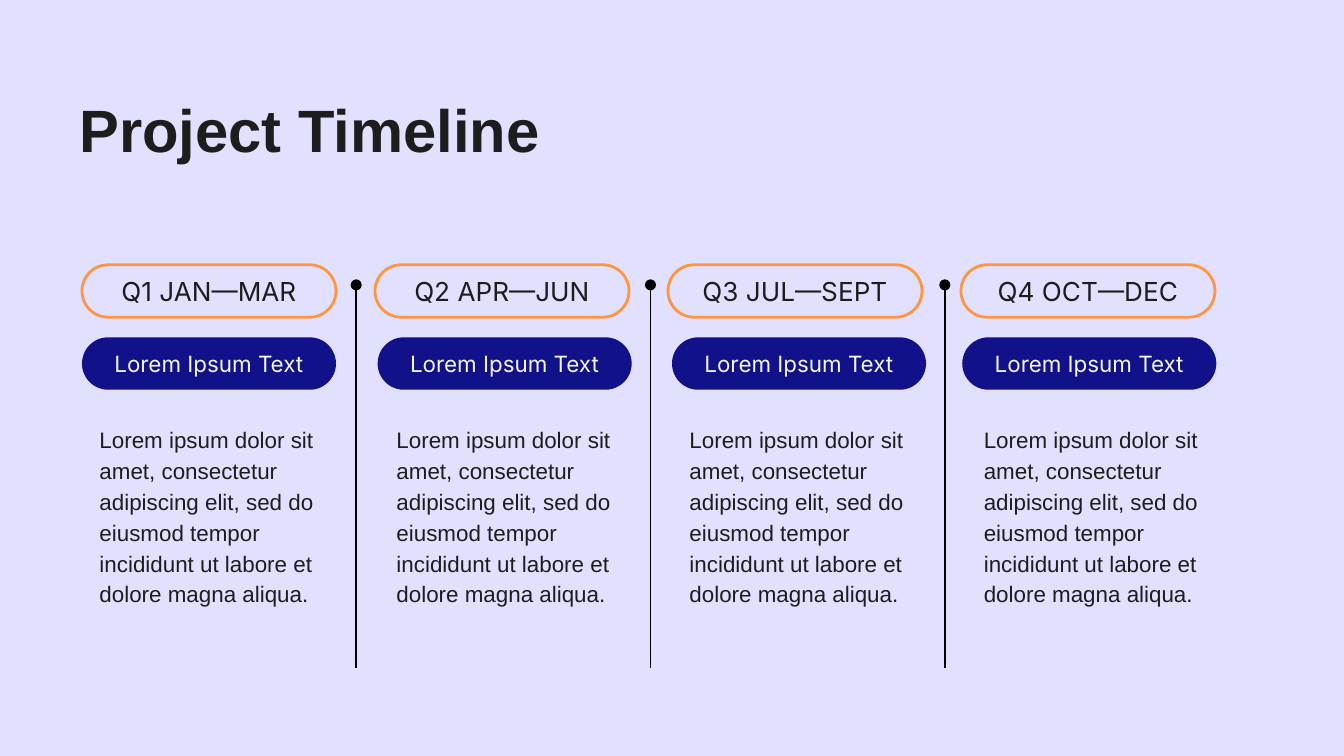
"""Build the Project Timeline slide: four quarters in columns parted by dotted-end rules."""
from lxml import etree
from pptx import Presentation
from pptx.dml.color import RGBColor
from pptx.enum.shapes import MSO_CONNECTOR, MSO_SHAPE
from pptx.enum.text import MSO_ANCHOR, MSO_AUTO_SIZE, PP_ALIGN
from pptx.oxml.ns import qn
from pptx.util import Inches, Pt

STRAIGHT = MSO_CONNECTOR.STRAIGHT
PILL = MSO_SHAPE.ROUNDED_RECTANGLE
TOP, MIDDLE = MSO_ANCHOR.TOP, MSO_ANCHOR.MIDDLE
LEFT, CENTER = PP_ALIGN.LEFT, PP_ALIGN.CENTER
NO_FIT = MSO_AUTO_SIZE.NONE

INK, CREAM, NAVY, ORANGE = "1D1D1D", "F6F5EC", "111189", "FF9540"
MARGIN, COLUMN = 0.61, 2.18
PILL_WIDTH, PILL_HEIGHT = 1.89, 0.39
QUARTER_ROW, TOPIC_ROW, DETAIL_ROW = 1.97, 2.51, 3.04
RULE_LEFT, RULE_STEP, RULE_TOP, RULE_BOTTOM = 2.65, 2.19, 2.12, 4.97
DETAIL = ("Lorem ipsum dolor sit amet, consectetur adipiscing elit, "
          "sed do eiusmod tempor incididunt ut labore et dolore magna aliqua.")
QUARTERS = [
    ("Q1 JAN—MAR", 0.61, 0.64),
    ("Q2 APR—JUN", 2.81, 2.85),
    ("Q3 JUL—SEPT", 5.00, 5.03),
    ("Q4 OCT—DEC", 7.16, 7.22),
]


def color(code):
    return RGBColor.from_string(code)


def write(holder, words, font, size, ink, align, anchor, spacing, bold=False):
    frame = holder.text_frame
    frame.word_wrap = True
    frame.auto_size = NO_FIT
    frame.vertical_anchor = anchor
    frame.margin_left = frame.margin_right = Inches(0.1)
    frame.margin_top = frame.margin_bottom = Inches(0.1)
    paragraph = frame.paragraphs[0]
    paragraph.alignment = align
    paragraph.line_spacing = spacing
    paragraph.space_before = Pt(0)
    if holder.is_placeholder:
        properties = paragraph._p.get_or_add_pPr()
        properties.set("marL", "0")
        properties.set("indent", "0")
        etree.SubElement(properties, qn("a:buNone"))
    run = paragraph.add_run()
    run.text = words
    run.font.name = font
    run.font.size = Pt(size)
    run.font.bold = bold
    run.font.color.rgb = color(ink)


deck = Presentation()
deck.slide_width = Inches(10)
deck.slide_height = deck.slide_width * 9 // 16
slide = deck.slides.add_slide(deck.slide_layouts.get_by_name("Comparison"))
slide.background.fill.solid()
slide.background.fill.fore_color.rgb = color("E1E1FF")

heading, *details = list(slide.placeholders)[:5]
for extra in list(slide.placeholders)[5:]:
    extra.element.getparent().remove(extra.element)

heading.left, heading.top = Inches(0.49), Inches(0.65)
heading.width, heading.height = Inches(7.51), Inches(1.14)
write(heading, "Project Timeline", "Arial", 32, INK, LEFT, TOP, 0.9, bold=True)

for column, (quarter, topic_left, detail_left) in enumerate(QUARTERS):
    detail = details[column]
    detail.left, detail.top = Inches(detail_left), Inches(DETAIL_ROW)
    detail.width, detail.height = Inches(1.81), Inches(1.88)
    write(detail, DETAIL, "Arial", 12, INK, LEFT, TOP, 1.15)

    pills = [
        (quarter, MARGIN + column * COLUMN, QUARTER_ROW, 14, INK, None),
        ("Lorem Ipsum Text", topic_left, TOPIC_ROW, 12, CREAM, NAVY),
    ]
    for label, left, top, size, ink, fill in pills:
        pill = slide.shapes.add_shape(
            PILL, Inches(left), Inches(top), Inches(PILL_WIDTH), Inches(PILL_HEIGHT))
        pill.shadow.inherit = False
        pill.adjustments[0] = 0.5
        if fill:
            pill.fill.solid()
            pill.fill.fore_color.rgb = color(fill)
            pill.line.fill.background()
        else:
            pill.fill.background()
            pill.line.color.rgb = color(ORANGE)
            pill.line.width = Pt(1.5)
        write(pill, label, "Inter", size, ink, CENTER, MIDDLE, 1.0)

for gap in range(len(QUARTERS) - 1):
    rule_x = Inches(RULE_LEFT + gap * RULE_STEP)
    rule = slide.shapes.add_connector(
        STRAIGHT, rule_x, Inches(RULE_TOP), rule_x, Inches(RULE_BOTTOM))
    rule.line.color.rgb = color("000000")
    rule.line.width = Pt(0.75)
    etree.SubElement(rule.line._get_or_add_ln(), qn("a:headEnd"), type="oval")
    etree.SubElement(rule._element.spPr, qn("a:effectLst"))

deck.save("out.pptx")
